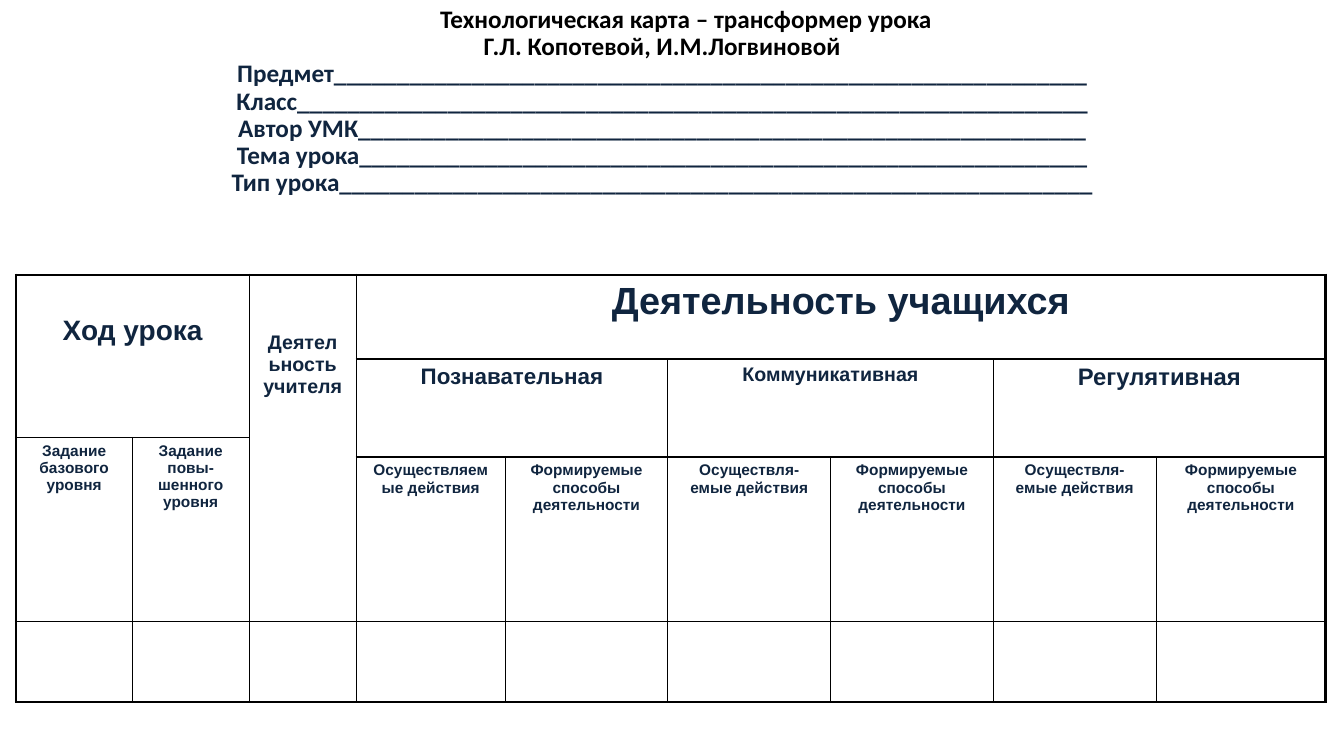
import pptx
import pptx.dml.color
import pptx.enum.text
import pptx.oxml
import pptx.oxml.ns
import pptx.util

Pt = pptx.util.Pt
BLACK = pptx.dml.color.RGBColor(0x00, 0x00, 0x00)
NAVY = pptx.dml.color.RGBColor(0x10, 0x25, 0x3F)

HEADING_LINES = ["Технологическая карта – трансформер урока", "Г.Л. Копотевой, И.М.Логвиновой"]
# Form field and the number of underscores after it
FORM_FIELDS = [("Предмет", 60), ("Класс", 63), ("Автор УМК", 58), ("Тема урока", 58), ("Тип урока", 60)]

COLUMN_WIDTHS = [83, 83.5, 76.5, 106.5, 116, 116.5, 116, 116.5, 121]
ROW_HEIGHTS = [60, 56, 14, 117.5, 57.5]
INSET_SIDE, INSET_TOP = 9.5, 3.6
THIN, THICK = 1, 2.25

# Row, column, rows spanned, columns spanned, text, size, top inset
HEADERS = [
    (0, 0, 2, 2, "Ход урока", 20, 28.5),
    (0, 2, 4, 1, "Деятельность учителя", 14, 40.5),
    (0, 3, 1, 6, "Деятельность учащихся", 27, INSET_TOP),
    (1, 3, 2, 2, "Познавательная", 16, INSET_TOP),
    (1, 5, 2, 2, "Коммуникативная", 14, INSET_TOP),
    (1, 7, 2, 2, "Регулятивная", 17, INSET_TOP),
    (2, 0, 2, 1, "Задание базового уровня", 11, INSET_TOP),
    (2, 1, 2, 1, "Задание повы-шенного уровня", 11, INSET_TOP),
]
ACTIONS = ["Осуществляемые действия", "Осуществля-емые действия", "Осуществля-емые действия"]
for index, action in enumerate(ACTIONS):
    HEADERS.append((3, 3 + 2 * index, 1, 1, action, 11, INSET_TOP))
    HEADERS.append((3, 4 + 2 * index, 1, 1, "Формируемые способы деятельности", 11, INSET_TOP))


def add_run(paragraph, text, size, font_name, color):
    run = paragraph.add_run()
    run.text = text
    run.font.size = Pt(size)
    run.font.name = font_name
    run.font.bold = True
    run.font.color.rgb = color


def place_title(slide, left, top, width, height):
    title = slide.shapes.title
    title.left, title.top, title.width, title.height = Pt(left), Pt(top), Pt(width), Pt(height)
    frame = title.text_frame
    frame.word_wrap = True
    frame.auto_size = pptx.enum.text.MSO_AUTO_SIZE.NONE
    frame.vertical_anchor = pptx.enum.text.MSO_ANCHOR.MIDDLE
    paragraph = frame.paragraphs[0]
    paragraph.alignment = pptx.enum.text.PP_ALIGN.CENTER
    paragraph.line_spacing = 0.9
    # The first line stands a little to the right of the others
    properties = paragraph._p.get_or_add_pPr()
    properties.set("marL", "0")
    properties.set("indent", str(Pt(34)))

    lines = [(text, BLACK) for text in HEADING_LINES]
    lines += [(label + "_" * count, NAVY) for label, count in FORM_FIELDS]
    for number, (text, color) in enumerate(lines):
        if number:
            paragraph.add_line_break()
        add_run(paragraph, text, 18, "Calibri", color)


def set_borders(cell, widths):
    properties = cell._tc.get_or_add_tcPr()
    for side, width in widths.items():
        properties.append(pptx.oxml.parse_xml(
            f'<a:ln{side} {pptx.oxml.ns.nsdecls("a")} w="{Pt(width)}">'
            f'<a:solidFill><a:srgbClr val="{BLACK}"/></a:solidFill></a:ln{side}>'))


def place_table(slide, left, top):
    row_count, column_count = len(ROW_HEIGHTS), len(COLUMN_WIDTHS)
    table = slide.shapes.add_table(row_count, column_count, Pt(left), Pt(top),
                                   Pt(sum(COLUMN_WIDTHS)), Pt(sum(ROW_HEIGHTS))).table
    table.first_row = False
    table.horz_banding = False
    for column, width in zip(table.columns, COLUMN_WIDTHS):
        column.width = Pt(width)
    for row, height in zip(table.rows, ROW_HEIGHTS):
        row.height = Pt(height)

    # Header cells
    for row, column, rows, columns, text, size, inset_top in HEADERS:
        cell = table.cell(row, column)
        if rows * columns > 1:
            cell.merge(table.cell(row + rows - 1, column + columns - 1))
        cell.margin_left = cell.margin_right = Pt(INSET_SIDE)
        cell.margin_top, cell.margin_bottom = Pt(inset_top), Pt(INSET_TOP)
        paragraph = cell.text_frame.paragraphs[0]
        paragraph.alignment = pptx.enum.text.PP_ALIGN.CENTER
        add_run(paragraph, text, size, "Arial", NAVY)

    # Thin grid with a thick left, top and right edge
    for row in range(row_count):
        for column in range(column_count):
            cell = table.cell(row, column)
            if not cell.is_spanned:
                end = column + (cell.span_width if cell.is_merge_origin else 1)
                set_borders(cell, {
                    "L": THICK if column == 0 else THIN,
                    "R": THICK if end == column_count else THIN,
                    "T": THICK if row == 0 else THIN,
                    "B": THIN,
                })
            cell.fill.background()


def main():
    presentation = pptx.Presentation()
    presentation.slide_width, presentation.slide_height = Pt(960), Pt(540)
    slide = presentation.slides.add_slide(presentation.slide_layouts[5])
    place_title(slide, 5, 26, 936, 93.5)
    place_table(slide, 11.5, 196.5)
    presentation.save("out.pptx")


if __name__ == "__main__":
    main()
